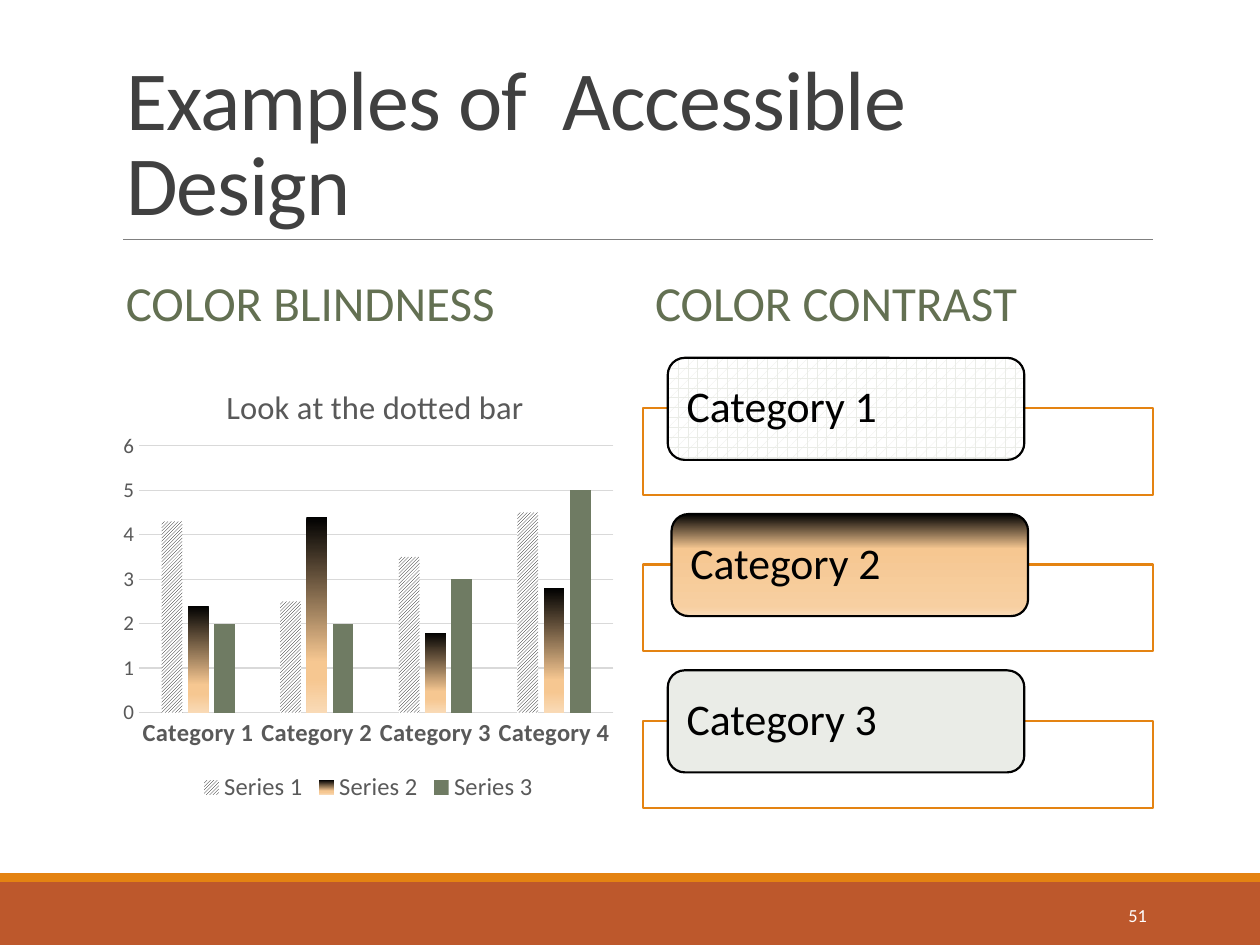
"""Build a slide on accessible chart fills and label contrast."""
from dataclasses import dataclass

import pptx
import pptx.chart.data
import pptx.dml.color
import pptx.enum.chart
import pptx.enum.dml
import pptx.enum.shapes
import pptx.enum.text
import pptx.oxml.ns
import pptx.util
from lxml import etree

Inches = pptx.util.Inches
Pt = pptx.util.Pt
qn = pptx.oxml.ns.qn
Shape = pptx.enum.shapes.MSO_SHAPE
Anchor = pptx.enum.text.MSO_ANCHOR
Align = pptx.enum.text.PP_ALIGN
Hatch = pptx.enum.dml.MSO_PATTERN


@dataclass(frozen=True)
class Theme:
    font: str = "Calibri"
    white: str = "FFFFFF"
    black: str = "000000"
    ink: str = "404040"
    label: str = "595959"
    rule: str = "808080"
    grid: str = "D9D9D9"
    head: str = "637052"
    green: str = "6F7B63"
    pale: str = "EAECE7"
    rust: str = "BD582C"
    gold: str = "E48312"
    title: float = 48
    body: float = 28
    card: float = 25
    chart: float = 18.6
    key: float = 14
    axis: float = 12
    page: float = 10.5


THEME = Theme()
FADE = ((0, THEME.black), (74, "F6C791"), (83, "F6C791"), (100, "F9DAB6"))
GLOW = ((0, "FEF9F3"), (0, THEME.black), (34, "F6C791"), (90, "F7CFA1"), (100, "F9DAB6"))


def rgb(code):
    return pptx.dml.color.RGBColor.from_string(code)


def apply(item, values):
    for name, value in values.items():
        setattr(item, name, value)


def style(font, size, color, bold=False):
    apply(font, {"name": THEME.font, "size": Pt(size), "bold": bold})
    font.color.rgb = rgb(color)


def stroke(line, color, width):
    line.color.rgb = rgb(color)
    line.width = Pt(width)


def paint(fill, root, look):
    """Fill with a colour, a (pattern, front) pair or a tuple of gradient stops."""
    if isinstance(look, str):
        fill.solid()
        fill.fore_color.rgb = rgb(look)
    elif isinstance(look[0], tuple):
        fill.gradient()
        fill.gradient_angle = 270
        stops = next(root.iter(qn("a:gsLst")))
        stops.clear()
        for spot, color in look:
            stop = etree.SubElement(stops, qn("a:gs"), pos=str(spot * 1000))
            etree.SubElement(stop, qn("a:srgbClr"), val=color)
    else:
        fill.patterned()
        fill.pattern = look[0]
        fill.fore_color.rgb = rgb(look[1])
        fill.back_color.rgb = rgb(THEME.white)


def add_box(slide, kind, place, look, edge=None):
    box = slide.shapes.add_shape(kind, *map(Inches, place))
    box.shadow.inherit = False
    paint(box.fill, box.element, look)
    if edge:
        stroke(box.line, edge, 1.25)
    else:
        box.line.fill.background()
    return box


def write(shape, text, size, color, frame=None, para=None):
    body = shape.text_frame
    apply(body, {"word_wrap": True, "vertical_anchor": Anchor.MIDDLE,
                 "auto_size": pptx.enum.text.MSO_AUTO_SIZE.NONE, **(frame or {})})
    line = body.paragraphs[0]
    apply(line, {"alignment": Align.LEFT, **(para or {})})
    run = line.add_run()
    run.text = text
    style(run.font, size, color)


def add_text(slide, place, *args, **kwargs):
    write(slide.shapes.add_textbox(*map(Inches, place)), *args, **kwargs)


def add_title(slide):
    title = slide.shapes.title
    apply(title, dict(zip(("left", "top", "width", "height"), map(Inches, (0.9, 0.31, 8.25, 1.59)))))
    write(title, "Examples of  Accessible Design", THEME.title, THEME.ink,
          {"vertical_anchor": Anchor.BOTTOM}, {"line_spacing": 0.85})
    next(title.element.iter(qn("a:rPr"))).set("spc", "-50")


def add_frame(slide):
    add_box(slide, Shape.RECTANGLE, (0, 7, 10, 0.5), THEME.rust)
    add_box(slide, Shape.RECTANGLE, (0, 6.93, 10, 0.07), THEME.gold)
    rule = slide.shapes.add_connector(pptx.enum.shapes.MSO_CONNECTOR.STRAIGHT,
                                      *map(Inches, (0.98, 1.9, 9.15, 1.9)))
    stroke(rule.line, THEME.rule, 0.5)
    etree.SubElement(rule.element.spPr, qn("a:effectLst"))


def lay_out(part, index, **spots):
    """Give a chart part a fixed place, in fractions of the chart."""
    for old in part.findall(qn("c:layout")):
        part.remove(old)
    layout = etree.Element(qn("c:layout"))
    part.insert(index, layout)
    manual = etree.SubElement(layout, qn("c:manualLayout"))
    for name, value in spots.items():
        etree.SubElement(manual, qn("c:" + name), val=str(value))


def add_chart(slide):
    kinds = pptx.enum.chart
    data = pptx.chart.data.CategoryChartData()
    data.categories = [f"Category {n}" for n in range(1, 5)]
    rows = ((4.3, 2.5, 3.5, 4.5), (2.4, 4.4, 1.8, 2.8), (2, 2, 3, 5))
    for n, row in enumerate(rows, 1):
        data.add_series(f"Series {n}", row)
    chart = slide.shapes.add_chart(kinds.XL_CHART_TYPE.COLUMN_CLUSTERED,
                                   *map(Inches, (0.9, 2.82, 4.05, 3.59)), data).chart
    style(chart.font, THEME.axis, THEME.label)
    apply(chart, {"has_title": True, "has_legend": True})
    run = chart.chart_title.text_frame.paragraphs[0].add_run()
    run.text = "Look at the dotted bar"
    style(run.font, THEME.chart, THEME.label)
    apply(chart.legend, {"position": kinds.XL_LEGEND_POSITION.BOTTOM, "include_in_layout": False})
    style(chart.legend.font, THEME.key, THEME.label)

    plot = chart.plots[0]
    apply(plot, {"gap_width": 219, "overlap": -27, "vary_by_categories": False})
    looks = ((Hatch.LIGHT_UPWARD_DIAGONAL, THEME.black), FADE, THEME.green)
    for series, look in zip(plot.series, looks):
        paint(series.format.fill, chart.element, look)

    for axis, size, bold in ((chart.category_axis, THEME.key, True), (chart.value_axis, THEME.axis, False)):
        axis.major_tick_mark = kinds.XL_TICK_MARK.NONE
        style(axis.tick_labels.font, size, THEME.label, bold)
    stroke(chart.category_axis.format.line, THEME.grid, 0.75)
    apply(chart.value_axis, {"minimum_scale": 0, "maximum_scale": 6, "major_unit": 1})
    chart.value_axis.format.line.fill.background()
    stroke(chart.value_axis.major_gridlines.format.line, THEME.grid, 0.75)

    lay_out(next(chart.element.iter(qn("c:title"))), 1, xMode="edge", yMode="edge", x=0.21, y=0.05)
    lay_out(next(chart.element.iter(qn("c:plotArea"))), 0, layoutTarget="inner",
            xMode="edge", yMode="edge", x=0.05, y=0.2, w=0.93, h=0.59)


def add_cards(slide):
    cards = ((5.3, (Hatch.PLAID, THEME.pale)), (5.33, GLOW), (5.3, THEME.pale))
    inset = {"margin_left": Inches(0.11), "margin_right": Inches(0.11), "margin_top": 0, "margin_bottom": 0}
    for n, (left, look) in enumerate(cards):
        top = 2.84 + 1.24 * n
        back = add_box(slide, Shape.RECTANGLE, (5.1, top + 0.4, 4.05, 0.69), THEME.white, THEME.gold)
        etree.SubElement(next(back.element.iter(qn("a:srgbClr"))), qn("a:alpha"), val="90000")
        add_box(slide, Shape.ROUNDED_RECTANGLE, (left, top, 2.83, 0.81), look, THEME.black)
        add_text(slide, (left + 0.04, top + 0.04, 2.76, 0.73), f"Category {n + 1}",
                 THEME.card, THEME.black, inset, {"line_spacing": 0.9})


def main():
    deck = pptx.Presentation()
    apply(deck, {"slide_width": Inches(10), "slide_height": Inches(7.5)})
    slide = deck.slides.add_slide(deck.slide_layouts[5])
    add_frame(slide)
    add_title(slide)
    gaps = {"line_spacing": 0.9, "space_before": Pt(12), "space_after": Pt(2)}
    for left, text in ((0.9, "COLOR BLINDNESS"), (5.1, "COLOR CONTRAST")):
        add_text(slide, (left, 2.02, 4.05, 0.81), text, THEME.body, THEME.head, para=gaps)
    add_chart(slide)
    add_cards(slide)
    add_text(slide, (8.12, 7.06, 1.08, 0.4), "51", THEME.page, THEME.white, para={"alignment": Align.RIGHT})
    deck.save("out.pptx")


if __name__ == "__main__":
    main()
